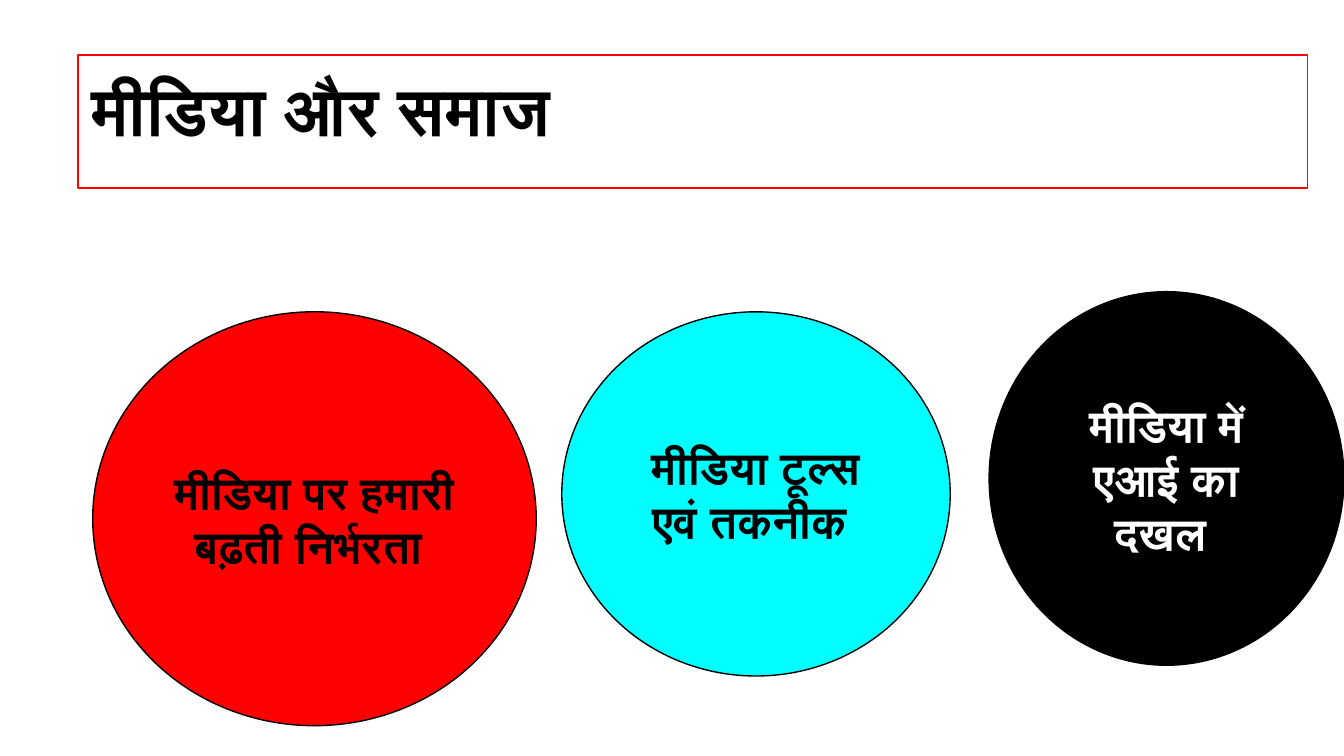
from dataclasses import dataclass

from pptx import Presentation
from pptx.dml.color import RGBColor
from pptx.enum.shapes import MSO_SHAPE
from pptx.enum.text import MSO_ANCHOR, MSO_AUTO_SIZE, PP_ALIGN
from pptx.util import Inches, Pt

BLACK = "000000"
WHITE = "FFFFFF"
RED = "FF0000"
CYAN = "00FFFF"
TITLE_ONLY = 5


@dataclass
class Circle:
    left: float
    top: float
    width: float
    height: float
    fill: str
    color: str
    text: str


CIRCLES = [
    Circle(0.69, 2.32, 3.3, 3.08, RED, BLACK, "मीडिया पर हमारी बढ़ती निर्भरता "),
    Circle(7.36, 2.17, 2.64, 2.78, BLACK, WHITE, "मीडिया में एआई का दखल "),
    Circle(4.18, 2.32, 2.89, 2.71, CYAN, BLACK, "मीडिया टूल्स एवं तकनीक "),
]


def rgb(value: str) -> RGBColor:
    return RGBColor.from_string(value)


def paint(sp, fill: str, line: str) -> None:
    sp.fill.solid()
    sp.fill.fore_color.rgb = rgb(fill)
    sp.line.color.rgb = rgb(line)
    sp.line.width = Pt(0.75)


def write(sp, text: str, font: str, size: int, color: str, align, anchor):
    """Fill the shape with one bold paragraph and return the paragraph."""
    tf = sp.text_frame
    tf.word_wrap = True
    tf.auto_size = MSO_AUTO_SIZE.NONE
    tf.vertical_anchor = anchor
    tf.margin_left = tf.margin_right = Inches(0.1)
    tf.margin_top = tf.margin_bottom = Inches(0.1)
    p = tf.paragraphs[0]
    p.alignment = align
    r = p.add_run()
    r.text = text
    r.font.name = font
    r.font.size = Pt(size)
    r.font.bold = True
    r.font.color.rgb = rgb(color)
    return p


def add_title(s, text: str) -> None:
    sp = s.shapes.title
    sp.left, sp.top = Inches(0.58), Inches(0.41)
    sp.width, sp.height = Inches(9.15), Inches(0.99)
    paint(sp, WHITE, RED)
    p = write(sp, text, "Manrope", 36, BLACK, PP_ALIGN.LEFT, MSO_ANCHOR.TOP)
    p.space_after = Pt(16)


def add_circle(s, c: Circle) -> None:
    sp = s.shapes.add_shape(MSO_SHAPE.OVAL, Inches(c.left), Inches(c.top),
                            Inches(c.width), Inches(c.height))
    sp.shadow.inherit = False
    paint(sp, c.fill, BLACK)
    write(sp, c.text, "Lato", 24, c.color, PP_ALIGN.CENTER, MSO_ANCHOR.MIDDLE)


def main() -> None:
    prs = Presentation()
    prs.slide_width = Inches(10)
    prs.slide_height = prs.slide_width * 9 // 16
    s = prs.slides.add_slide(prs.slide_layouts[TITLE_ONLY])
    add_title(s, "मीडिया और समाज")
    for circle in CIRCLES:
        add_circle(s, circle)
    prs.save("out.pptx")


if __name__ == "__main__":
    main()
